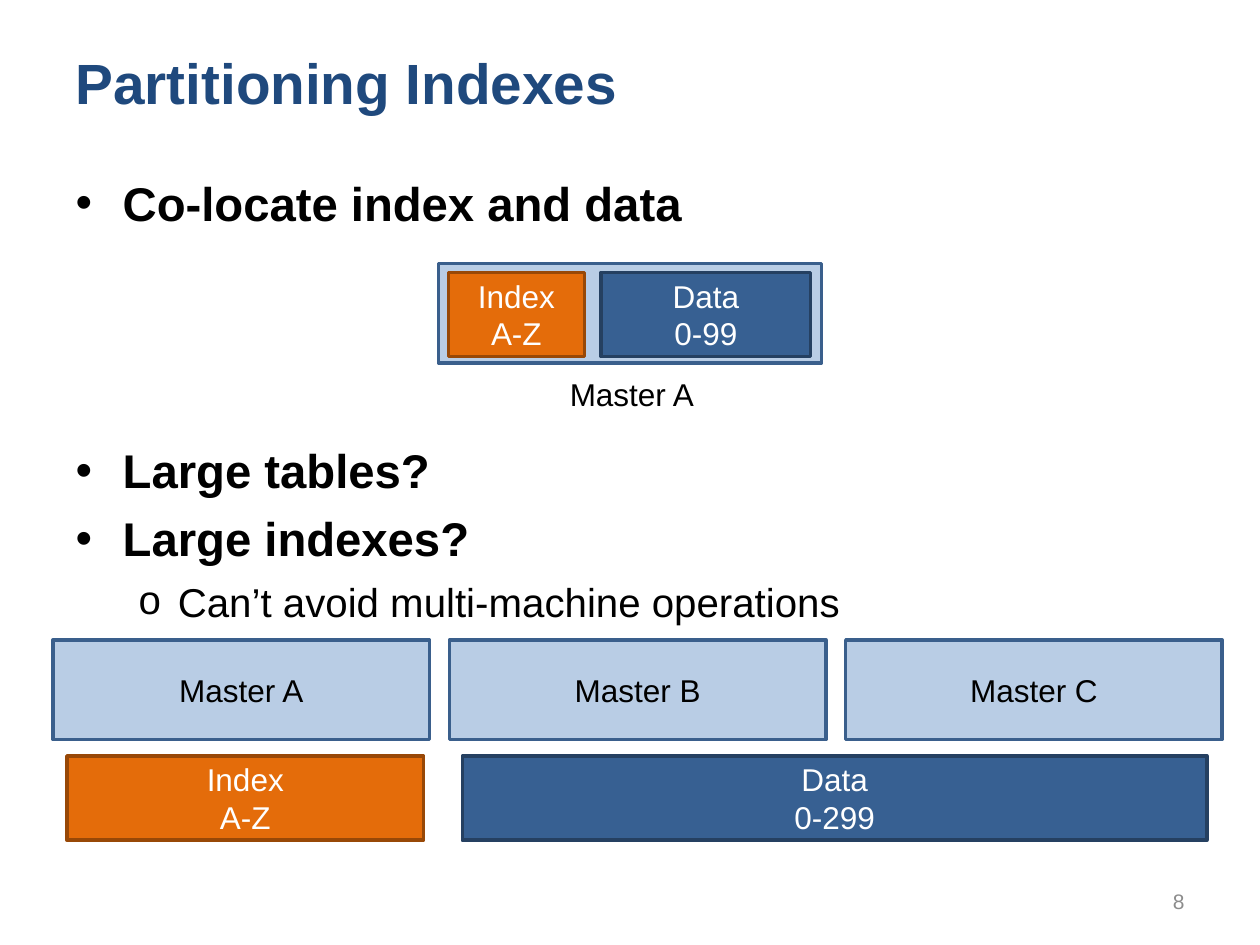
from lxml.etree import SubElement
from pptx import Presentation
from pptx.dml.color import RGBColor
from pptx.enum.shapes import MSO_SHAPE as Shape
from pptx.enum.text import MSO_ANCHOR as Anchor, MSO_AUTO_SIZE as AutoSize, PP_ALIGN as Align
from pptx.oxml.ns import qn
from pptx.util import Cm, Pt

BLACK = RGBColor(0x00, 0x00, 0x00)
WHITE = RGBColor(0xFF, 0xFF, 0xFF)
GREY = RGBColor(0x8C, 0x8C, 0x8C)
NAVY = RGBColor(0x1F, 0x49, 0x7D)
PALE_BLUE = RGBColor(0xB9, 0xCD, 0xE5)
MID_BLUE = RGBColor(0x3A, 0x5F, 0x8C)
ORANGE = RGBColor(0xE4, 0x6C, 0x0A)
BROWN = RGBColor(0x98, 0x48, 0x07)
BLUE = RGBColor(0x37, 0x60, 0x92)
DARK_BLUE = RGBColor(0x25, 0x40, 0x61)

MASTER = (PALE_BLUE, MID_BLUE, BLACK)
INDEX = (ORANGE, BROWN, WHITE)
DATA = (BLUE, DARK_BLUE, WHITE)
LEVELS = [("•", 27, True, 0.95, 0.95), ("o", 23, False, 2.06, 0.79)]


class SlideBuilder:
    """Draws the elements of one slide in a shared style."""

    font_name = "Arial"

    def __init__(self, slide):
        self.slide = slide

    def place(self, shape, left, top, width, height):
        shape.left, shape.top = Cm(left), Cm(top)
        shape.width, shape.height = Cm(width), Cm(height)

    def style(self, paragraph, size, color, bold=False, align=Align.LEFT):
        paragraph.alignment = align
        for run in paragraph.runs:
            font = run.font
            font.name, font.size, font.bold = self.font_name, Pt(size), bold
            font.color.rgb = color

    def title(self, text, *box):
        heading = self.slide.shapes.title
        self.place(heading, *box)
        frame = heading.text_frame
        frame.text = text
        frame.auto_size = AutoSize.NONE
        frame.vertical_anchor = Anchor.MIDDLE
        self.style(frame.paragraphs[0], 32.4, NAVY, True)

    def bullets(self, items, *box):
        body = self.slide.placeholders[1]
        self.place(body, *box)
        frame = body.text_frame
        frame.text = "\n".join(text for text, _, _ in items)
        frame.auto_size = AutoSize.NONE
        for paragraph, (_, level, space) in zip(frame.paragraphs, items):
            mark, size, bold, margin, hanging = LEVELS[level]
            paragraph.level = level
            paragraph.space_before = Pt(space)
            self.style(paragraph, size, BLACK, bold)
            properties = paragraph._p.get_or_add_pPr()
            properties.set("marL", str(Cm(margin)))
            properties.set("indent", str(-Cm(hanging)))
            SubElement(properties, qn("a:buFont")).set("typeface", self.font_name)
            SubElement(properties, qn("a:buChar")).set("char", mark)

    def group(self):
        return self.slide.shapes.add_group_shape().shapes

    def block(self, parent, text, colors, *box):
        fill, line, text_color = colors
        block = parent.add_shape(Shape.RECTANGLE, *map(Cm, box))
        block.shadow.inherit = False
        block.fill.solid()
        block.fill.fore_color.rgb = fill
        block.line.color.rgb = line
        block.line.width = Pt(2)
        frame = block.text_frame
        frame.text = text
        frame.vertical_anchor = Anchor.MIDDLE
        for paragraph in frame.paragraphs:
            self.style(paragraph, 18, text_color, align=Align.CENTER)

    def label(self, text, size, color, align, anchor, *box):
        frame = self.slide.shapes.add_textbox(*map(Cm, box)).text_frame
        frame.text = text
        frame.word_wrap = True
        frame.vertical_anchor = anchor
        self.style(frame.paragraphs[0], size, color, align=align)


def main():
    deck = Presentation()
    deck.slide_width, deck.slide_height = Cm(25.4), Cm(19.05)
    page = SlideBuilder(deck.slides.add_slide(deck.slide_layouts[1]))

    page.title("Partitioning Indexes", 1.27, 0.76, 22.86, 1.78)
    page.bullets([
        ("Co-locate index and data", 0, 3),
        ("Large tables?", 0, 120.4),
        ("Large indexes?", 0, 6.5),
        ("Can’t avoid multi-machine operations", 1, 6),
    ], 1.27, 3.38, 22.86, 14.66)

    colocated = page.group()
    page.block(colocated, "", MASTER, 8.84, 5.31, 7.72, 2.01)
    page.block(colocated, "Index\nA-Z", INDEX, 9.04, 5.49, 2.74, 1.7)
    page.block(colocated, "Data\n0-99", DATA, 12.12, 5.49, 4.22, 1.7)
    page.label("Master A", 18, BLACK, Align.CENTER, Anchor.TOP, 8.84, 7.44, 7.8, 1.02)

    partitioned = page.group()
    for column, letter in enumerate("ABC"):
        page.block(partitioned, f"Master {letter}", MASTER, 1.07 + 7.99 * column, 12.9, 7.59, 2.01)
    page.block(partitioned, "Index\nA-Z", INDEX, 1.35, 15.24, 7.19, 1.7)
    page.block(partitioned, "Data\n0-299", DATA, 9.32, 15.24, 15.01, 1.7)

    page.label("8", 12, GREY, Align.RIGHT, Anchor.MIDDLE, 18.21, 17.65, 5.92, 1.02)
    deck.save("out.pptx")


if __name__ == "__main__":
    main()
